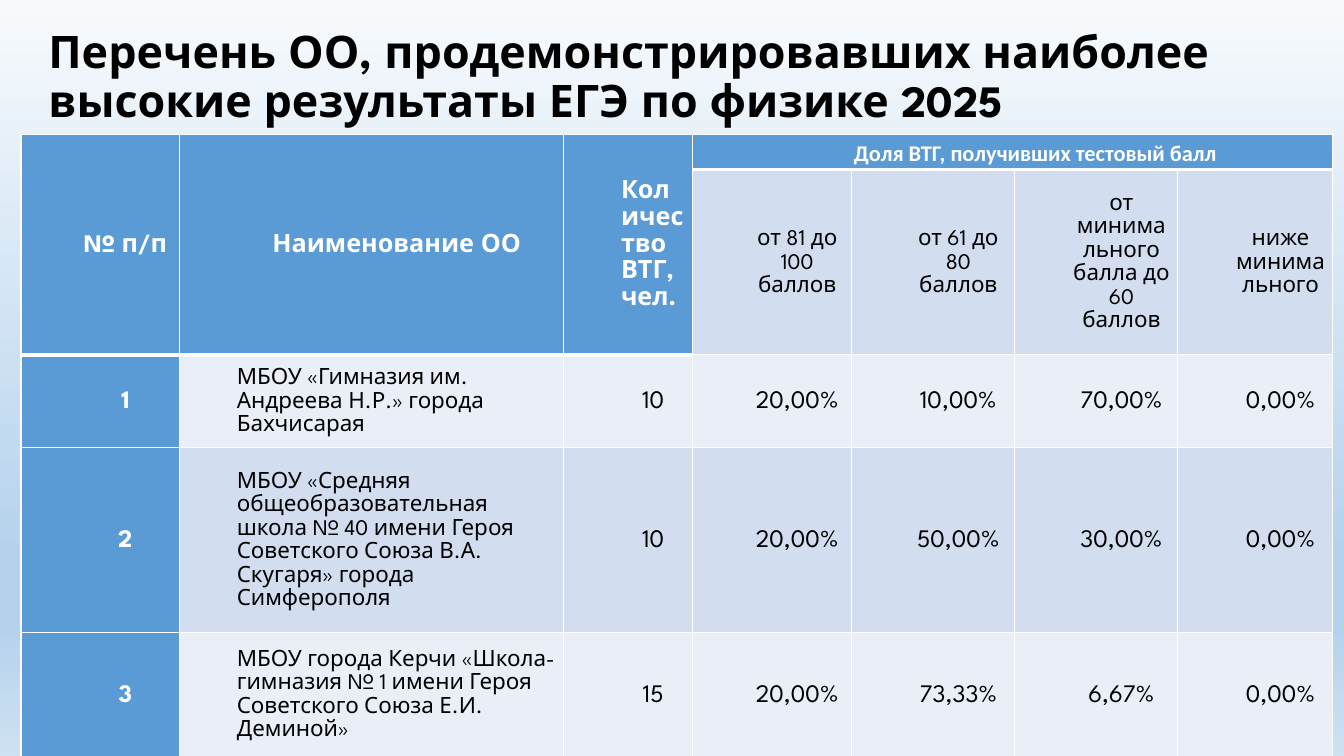
from lxml import etree
from pptx import Presentation
from pptx.dml.color import RGBColor
from pptx.enum.text import MSO_ANCHOR, PP_ALIGN
from pptx.oxml.ns import qn
from pptx.util import Cm, Pt

MIDDLE = MSO_ANCHOR.MIDDLE
LEFT, CENTER = PP_ALIGN.LEFT, PP_ALIGN.CENTER
BLACK = RGBColor(0, 0, 0)
WHITE = RGBColor(255, 255, 255)
BLUE = RGBColor(0x5B, 0x9B, 0xD5)
PALE = RGBColor(0xEA, 0xEF, 0xF7)
MIST = RGBColor(0xD2, 0xDE, 0xEF)
SKY = [
    (0, RGBColor(0xF7, 0xFA, 0xFD)),
    (74, RGBColor(0xB5, 0xD2, 0xEC)),
    (83, RGBColor(0xB5, 0xD2, 0xEC)),
    (100, RGBColor(0xCE, 0xE1, 0xF2)),
]
FONT = "League Spartan"

WIDTHS = [3.99, 9.68, 3.25, 4.01, 4.11, 4.11, 3.91]
HEIGHTS = [0.89, 4.42, 2.18, 4.42, 2.92]
ROWS = [
    ["№ п/п", "Наименование ОО", "Количество ВТГ, чел.",
     "Доля ВТГ, получивших тестовый балл ", "", "", ""],
    ["", "", "", "от 81 до 100 баллов", "от 61 до 80 баллов",
     "от минимального балла до 60 баллов", "ниже минимального"],
    ["1", "МБОУ «Гимназия им. Андреева Н.Р.» города Бахчисарая",
     "10", "20,00%", "10,00%", "70,00%", "0,00%"],
    ["2", "МБОУ «Средняя общеобразовательная школа № 40 имени Героя "
     "Советского Союза В.А. Скугаря» города Симферополя",
     "10", "20,00%", "50,00%", "30,00%", "0,00%"],
    ["3", "МБОУ города Керчи «Школа-гимназия № 1 имени Героя "
     "Советского Союза Е.И. Деминой»",
     "15", "20,00%", "73,33%", "6,67%", "0,00%"],
]


def style(par, size, color, bold, face=FONT):
    for run in par.runs:
        run.font.name = face
        run.font.size = Pt(size)
        run.font.bold = bold
        run.font.color.rgb = color


def border(cell, side, width):
    props = cell._tc.get_or_add_tcPr()
    line = etree.SubElement(props, qn("a:ln" + side), w=str(Pt(width)))
    fill = etree.SubElement(line, qn("a:solidFill"))
    etree.SubElement(fill, qn("a:srgbClr"), val=str(WHITE))


deck = Presentation()
deck.slide_width = Cm(33.87)
deck.slide_height = Cm(19.05)
slide = deck.slides.add_slide(deck.slide_layouts[6])

back = slide.background.fill
back.gradient()
back.gradient_angle = 270
stops = slide._element.find(".//" + qn("a:gsLst"))
for old in list(stops):
    stops.remove(old)
for place, color in SKY:
    stop = etree.SubElement(stops, qn("a:gs"), pos=str(place * 1000))
    etree.SubElement(stop, qn("a:srgbClr"), val=str(color))

title = slide.shapes.add_textbox(Cm(0.97), Cm(0.76), Cm(31.55), Cm(3.68))
frame = title.text_frame
frame.word_wrap = True
frame.vertical_anchor = MIDDLE
frame.margin_bottom = Cm(1.36)
frame.text = ("Перечень ОО, продемонстрировавших наиболее "
              "высокие результаты ЕГЭ по физике 2025")
frame.paragraphs[0].line_spacing = 0.9
style(frame.paragraphs[0], 32, BLACK, True)

holder = slide.shapes.add_table(
    len(HEIGHTS), len(WIDTHS), Cm(0.53), Cm(3.38),
    Cm(sum(WIDTHS)), Cm(sum(HEIGHTS)))
table = holder.table
table.horz_banding = False
for col, width in zip(table.columns, WIDTHS):
    col.width = Cm(width)
for row, height in zip(table.rows, HEIGHTS):
    row.height = Cm(height)

for r, texts in enumerate(ROWS):
    for c, text in enumerate(texts):
        cell = table.cell(r, c)
        last = 1 if c < 3 else 0
        border(cell, "L", 1)
        border(cell, "R", 1)
        border(cell, "T", 3 if r == last + 1 else 1)
        border(cell, "B", 3 if r <= last else 1)
        head = r <= last or c == 0
        cell.fill.solid()
        cell.fill.fore_color.rgb = BLUE if head else MIST if r % 2 else PALE
        cell.vertical_anchor = MIDDLE
        cell.margin_left = cell.margin_right = Cm(0.18)
        cell.margin_top = cell.margin_bottom = 0
        if not text:
            continue
        cell.text_frame.text = text
        par = cell.text_frame.paragraphs[0]
        par.line_spacing = 1.15
        par._p.get_or_add_pPr().set("marL", str(Cm(1.27)))
        par._p.get_or_add_pPr().set("indent", "0")
        plain = (r, c) == (0, 2) or (r > 1 and c == 1)
        par.alignment = LEFT if plain else CENTER
        share = (r, c) == (0, 3)
        small = share or r == 1 or (r > 1 and c == 1)
        style(par, 16 if small else 18, WHITE if head else BLACK, head,
              "Calibri" if share else FONT)

for c in range(3):
    table.cell(0, c).merge(table.cell(1, c))
table.cell(0, 3).merge(table.cell(0, 6))

deck.save("out.pptx")
